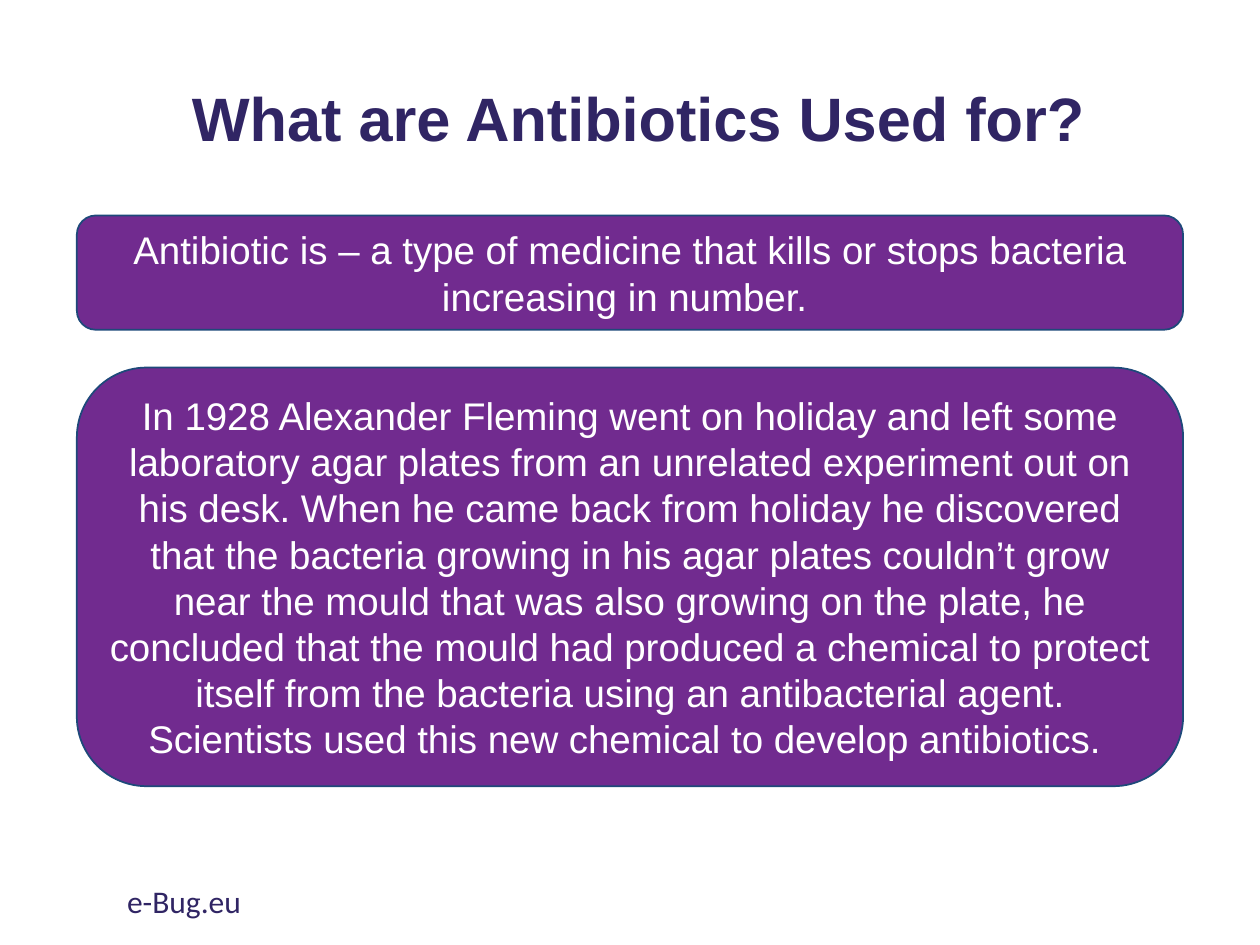
from dataclasses import dataclass

import pptx
import pptx.dml.color
import pptx.enum.shapes
import pptx.enum.text
import pptx.util

ALIGN = pptx.enum.text.PP_ALIGN
ANCHOR = pptx.enum.text.MSO_ANCHOR


@dataclass(frozen=True)
class Theme:
    ink: str = "302564"
    panel: str = "712B8F"
    outline: str = "1E497A"
    light: str = "FFFFFF"
    heading_font: str = "Arial"
    footer_font: str = "Calibri"
    title_size: int = 35
    body_size: int = 22
    footer_size: int = 18


def color(value):
    return pptx.dml.color.RGBColor.from_string(value)


class SlideBuilder:
    def __init__(self, deck, theme):
        self.deck = deck
        self.theme = theme
        self.page = deck.slides.add_slide(deck.slide_layouts[5])

    def area(self, left, top, width, height):
        across, down = self.deck.slide_width, self.deck.slide_height
        return [int(share * full) for share, full in
                zip((left, top, width, height), (across, down, across, down))]

    def set_text(self, box, text, font, size, ink, align, anchor, bold=False):
        frame = box.text_frame
        frame.word_wrap = True
        frame.auto_size = pptx.enum.text.MSO_AUTO_SIZE.NONE
        frame.vertical_anchor = anchor
        frame.text = text
        para = frame.paragraphs[0]
        para.alignment = align
        para.font.name = font
        para.font.size = pptx.util.Pt(size)
        para.font.bold = bold
        para.font.color.rgb = color(ink)
        return para

    def title(self, text, *shares):
        box = self.page.shapes.title
        box.left, box.top, box.width, box.height = self.area(*shares)
        para = self.set_text(box, text, self.theme.heading_font, self.theme.title_size,
                             self.theme.ink, ALIGN.CENTER, ANCHOR.MIDDLE, bold=True)
        para.line_spacing = 0.9

    def panel(self, text, *shares):
        box = self.page.shapes.add_shape(
            pptx.enum.shapes.MSO_SHAPE.ROUNDED_RECTANGLE, *self.area(*shares))
        box.shadow.inherit = False
        box.fill.solid()
        box.fill.fore_color.rgb = color(self.theme.panel)
        box.line.color.rgb = color(self.theme.outline)
        box.line.width = pptx.util.Pt(1)
        self.set_text(box, text, self.theme.heading_font, self.theme.body_size,
                      self.theme.light, ALIGN.CENTER, ANCHOR.MIDDLE)

    def footer(self, text, *shares):
        box = self.page.shapes.add_textbox(*self.area(*shares))
        self.set_text(box, text, self.theme.footer_font, self.theme.footer_size,
                      self.theme.ink, ALIGN.LEFT, ANCHOR.TOP)


def main():
    deck = pptx.Presentation()
    deck.slide_width = pptx.util.Inches(10)
    deck.slide_height = pptx.util.Inches(7.5)

    slide = SlideBuilder(deck, Theme())
    margin = 0.061
    panel_width = 1 - 2 * margin

    slide.title("What are Antibiotics Used for?", 0.076, 0.068, 0.862, 0.121)
    slide.panel(
        "Antibiotic is – a type of medicine that kills or stops bacteria "
        "increasing in number. ",
        margin, 0.228, panel_width, 0.121)
    slide.panel(
        "In 1928 Alexander Fleming went on holiday and left some laboratory agar "
        "plates from an unrelated experiment out on his desk. When he came back "
        "from holiday he discovered that the bacteria growing in his agar plates "
        "couldn’t grow near the mould that was also growing on the plate, he "
        "concluded that the mould had produced a chemical to protect itself from "
        "the bacteria using an antibacterial agent. Scientists used this new "
        "chemical to develop antibiotics. ",
        margin, 0.389, panel_width, 0.443)
    slide.footer("e-Bug.eu", 0.091, 0.927, 0.338, 0.053)

    deck.save("out.pptx")


if __name__ == "__main__":
    main()
